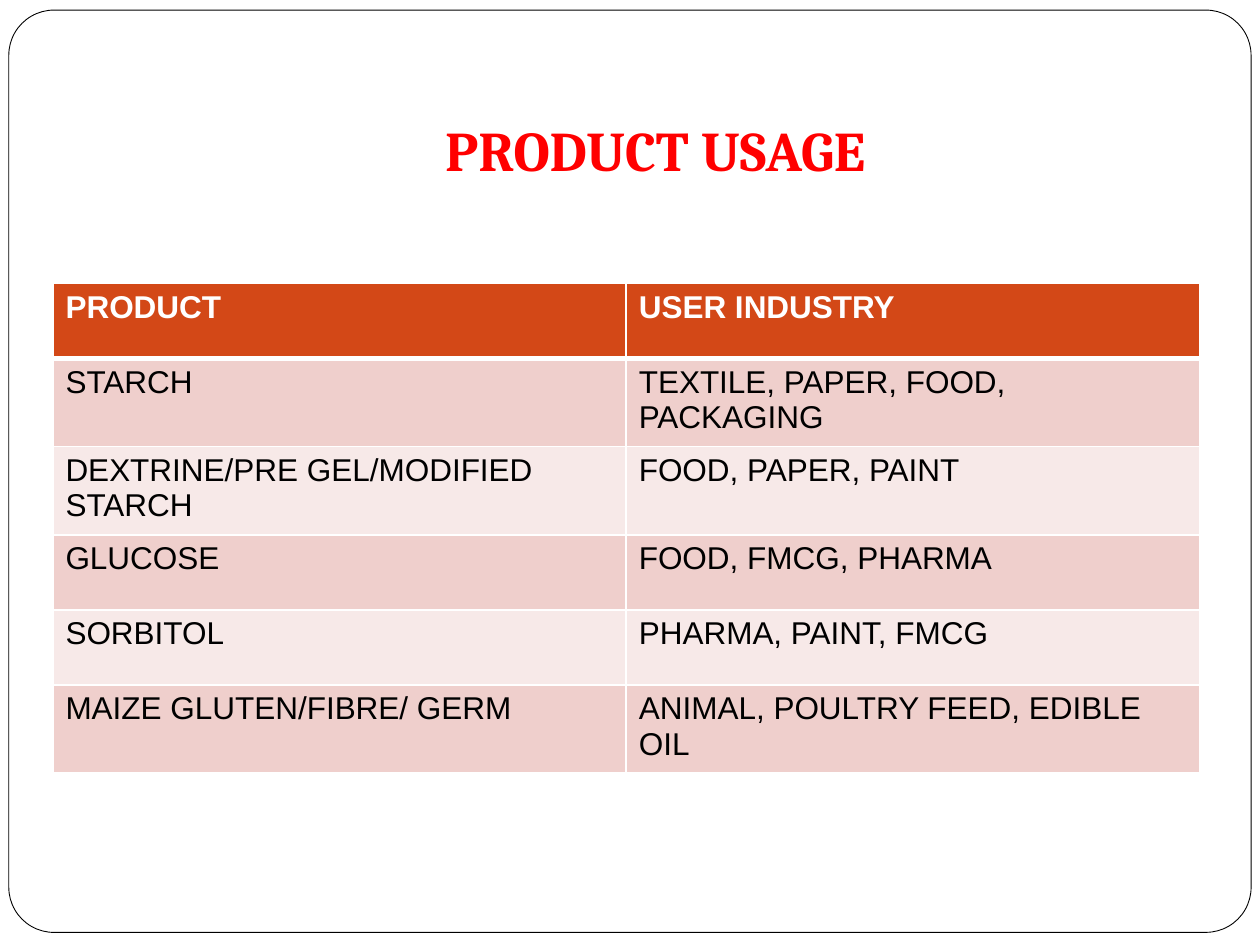
from pptx import Presentation
from pptx.dml.color import RGBColor
from pptx.enum.shapes import MSO_SHAPE
from pptx.enum.text import MSO_ANCHOR, PP_ALIGN
from pptx.oxml import parse_xml
from pptx.oxml.ns import nsdecls
from pptx.util import Inches, Pt

WHITE = RGBColor(0xFF, 0xFF, 0xFF)
BLACK = RGBColor(0x00, 0x00, 0x00)
RED = RGBColor(0xFF, 0x00, 0x00)
ORANGE = RGBColor(0xD3, 0x48, 0x17)
DARK_BAND = RGBColor(0xEF, 0xCF, 0xCC)
LIGHT_BAND = RGBColor(0xF7, 0xE9, 0xE8)

USAGE = [
    ("PRODUCT", "USER INDUSTRY"),
    ("STARCH", "TEXTILE, PAPER, FOOD, PACKAGING"),
    ("DEXTRINE/PRE GEL/MODIFIED STARCH", "FOOD, PAPER, PAINT"),
    ("GLUCOSE", "FOOD, FMCG, PHARMA"),
    ("SORBITOL", "PHARMA, PAINT, FMCG"),
    ("MAIZE GLUTEN/FIBRE/ GERM", "ANIMAL, POULTRY FEED, EDIBLE OIL"),
]


def style_text(paragraph, name, size, color, bold):
    for span in paragraph.runs:
        span.font.name = name
        span.font.size = Pt(size)
        span.font.color.rgb = color
        span.font.bold = bold


def add_frame(page):
    frame = page.shapes.add_shape(
        MSO_SHAPE.ROUNDED_RECTANGLE, Inches(0.07), Inches(0.08), Inches(9.86), Inches(7.32)
    )
    frame.adjustments[0] = 0.049
    frame.shadow.inherit = False
    frame.fill.solid()
    frame.fill.fore_color.rgb = WHITE
    frame.line.color.rgb = BLACK
    frame.line.width = Pt(0.5)


def add_title(page, text):
    box = page.shapes.add_textbox(Inches(1), Inches(0.3), Inches(8.5), Inches(1.25))
    text_frame = box.text_frame
    text_frame.word_wrap = True
    text_frame.vertical_anchor = MSO_ANCHOR.BOTTOM
    text_frame.margin_bottom = Inches(0.1)
    text_frame.text = text
    paragraph = text_frame.paragraphs[0]
    paragraph.alignment = PP_ALIGN.CENTER
    style_text(paragraph, "Cambria", 32, RED, True)


def set_borders(cell, bottom_width):
    properties = cell._tc.get_or_add_tcPr()
    widths = {"lnL": 1, "lnR": 1, "lnT": 1, "lnB": bottom_width}
    for position, (side, width) in enumerate(widths.items()):
        border = parse_xml(
            f'<a:{side} {nsdecls("a")} w="{Pt(width)}"><a:solidFill>'
            f'<a:srgbClr val="{WHITE}"/></a:solidFill></a:{side}>'
        )
        properties.insert(position, border)


def fill_cell(cell, text, fill, color, bold, bottom_width):
    cell.text_frame.text = text
    style_text(cell.text_frame.paragraphs[0], "Arial", 18, color, bold)
    cell.fill.solid()
    cell.fill.fore_color.rgb = fill
    set_borders(cell, bottom_width)


def add_usage_table(page, rows):
    table = page.shapes.add_table(
        len(rows), len(rows[0]), Inches(0.42), Inches(2.25), Inches(9.1), Inches(3.57)
    ).table
    for row, texts in enumerate(rows):
        band = DARK_BAND if row % 2 else LIGHT_BAND
        style = (band, BLACK, False, 1) if row else (ORANGE, WHITE, True, 3)
        for column, text in enumerate(texts):
            fill_cell(table.cell(row, column), text, *style)


def main():
    deck = Presentation()
    deck.slide_width = Inches(10)
    deck.slide_height = Inches(7.5)
    page = deck.slides.add_slide(deck.slide_layouts[6])
    add_frame(page)
    add_title(page, "PRODUCT USAGE ")
    add_usage_table(page, USAGE)
    deck.save("out.pptx")


if __name__ == "__main__":
    main()
